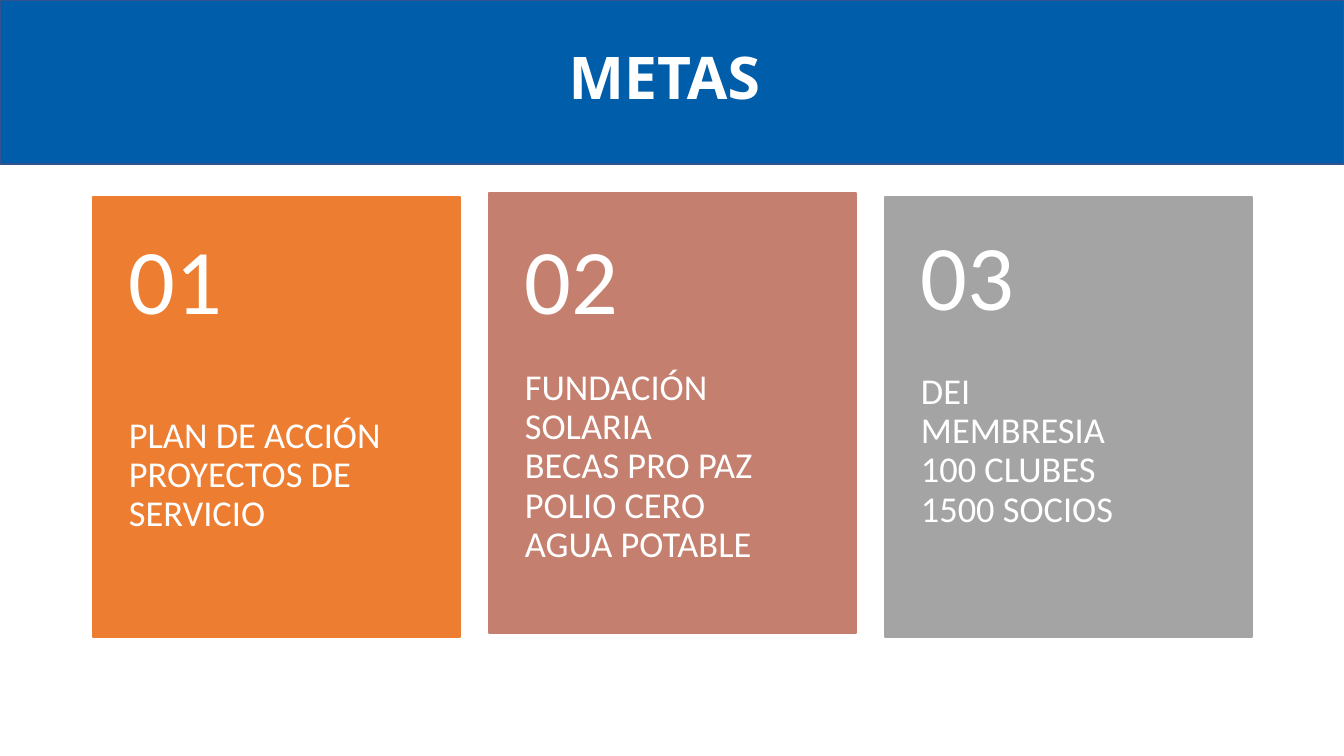
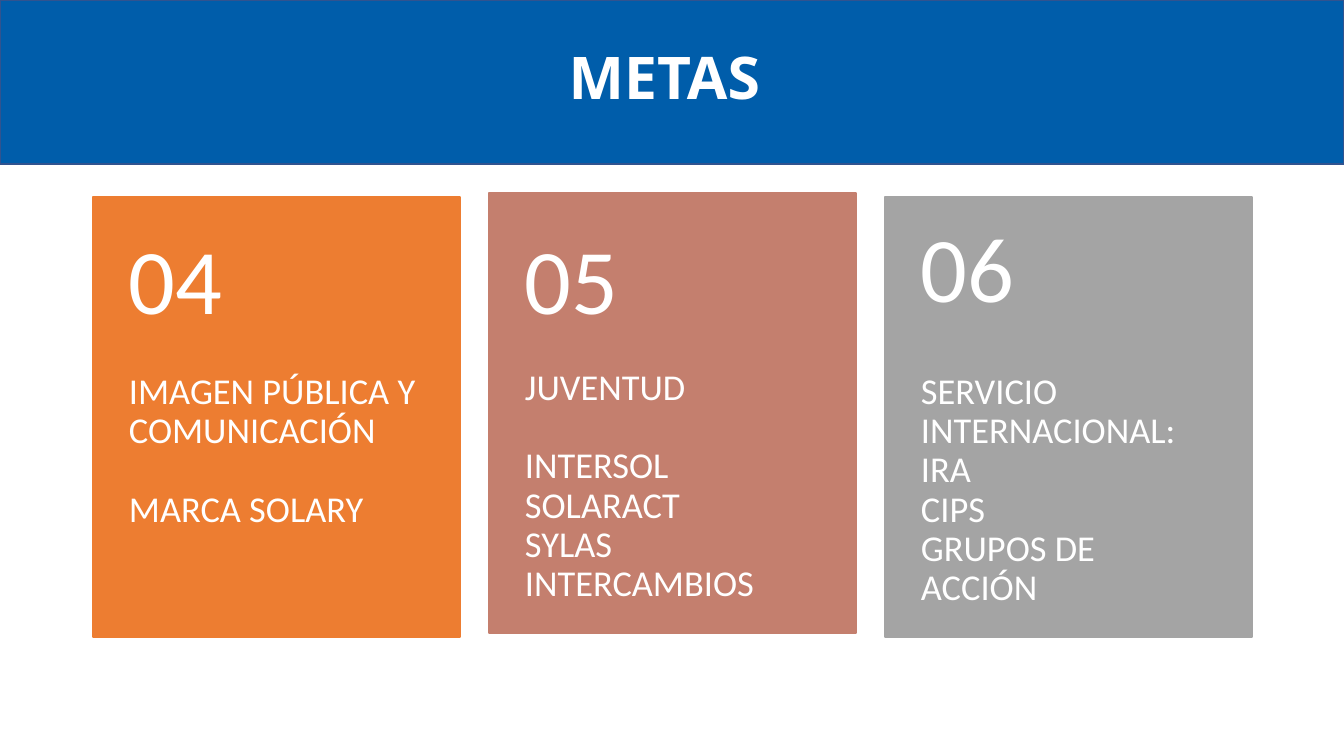
import pptx
import pptx.util
import pptx.dml.color
import pptx.enum.shapes
import pptx.enum.text

RGBColor = pptx.dml.color.RGBColor
Anchor = pptx.enum.text.MSO_ANCHOR
Align = pptx.enum.text.PP_ALIGN

# Content: per card its number, the number's top, the text's extra drop, and its lines.
# A line given as (text, GAP) stands one line lower.
GAP = 28
TITLE = "METAS "
SLIDES = [
    [
        ("01", 197, 44, ["PLAN DE ACCIÓN", "PROYECTOS DE", "SERVICIO"]),
        ("02", 197, 0, ["FUNDACIÓN SOLARIA", "BECAS PRO PAZ", "POLIO CERO", "AGUA POTABLE"]),
        ("03", 193, 0, ["DEI", "MEMBRESIA", "100 CLUBES", "1500 SOCIOS"]),
    ],
    [
        ("04", 197, 0, ["IMAGEN PÚBLICA Y", "COMUNICACIÓN", ("MARCA SOLARY", GAP)]),
        ("05", 197, 0, ["JUVENTUD", ("INTERSOL", GAP), "SOLARACT", "SYLAS", "INTERCAMBIOS"]),
        ("06", 185, 0, ["SERVICIO INTERNACIONAL:", "IRA", "CIPS", "GRUPOS DE ACCIÓN"]),
    ],
]

# Colours
WHITE = RGBColor(0xFF, 0xFF, 0xFF)
BLUE = RGBColor(0x00, 0x5D, 0xAA)
BLUE_EDGE = RGBColor(0x31, 0x53, 0x8F)
ORANGE = RGBColor(0xED, 0x7D, 0x31)
CLAY = RGBColor(0xC4, 0x7F, 0x6E)
GRAY = RGBColor(0xA4, 0xA4, 0xA4)

# Layout in px
EMU_PER_PX = 914400 / 100.8
SLIDE_W, SLIDE_H, BAND_H = 1344, 756, 164
CARD_LEFT, CARD_STEP, CARD_W, CARD_H = 93, 396, 367, 440
CARD_STYLES = [(197, ORANGE), (193, CLAY), (197, GRAY)]
NUMBER_H = 176

# Text styles: margins are left, top, right, bottom in px
TITLE_STYLE = {
    "font": {"name": "Open Sans", "size": pptx.util.Pt(42), "bold": True},
    "margins": (10, 5, 10, 5), "anchor": Anchor.BOTTOM, "align": Align.CENTER,
}
NUMBER_STYLE = {
    "font": {"name": "Calibri", "size": pptx.util.Pt(66)},
    "margins": (36, 18, 36, 18), "anchor": Anchor.MIDDLE, "align": Align.LEFT,
}
BODY_STYLE = {
    "font": {"name": "Calibri", "size": pptx.util.Pt(26)},
    "margins": (36, 0, 36, 36), "anchor": Anchor.TOP, "align": Align.LEFT,
}


def px(value):
    return pptx.util.Emu(round(value * EMU_PER_PX))


def add_block(page, area, fill, edge):
    block = page.shapes.add_shape(pptx.enum.shapes.MSO_SHAPE.RECTANGLE, *map(px, area))
    block.shadow.inherit = False
    block.fill.solid()
    block.fill.fore_color.rgb = fill
    block.line.color.rgb = edge
    block.line.width = pptx.util.Pt(1)


def add_text(page, area, lines, style):
    frame = page.shapes.add_textbox(*map(px, area)).text_frame
    frame.word_wrap = True
    frame.vertical_anchor = style["anchor"]
    for side, margin in zip(("left", "top", "right", "bottom"), style["margins"]):
        setattr(frame, "margin_" + side, px(margin))
    for index, line in enumerate(lines):
        text, gap = line if isinstance(line, tuple) else (line, 0)
        para = frame.add_paragraph() if index else frame.paragraphs[0]
        para.alignment = style["align"]
        para.line_spacing = 0.9
        para.space_before = pptx.util.Pt(gap)
        span = para.add_run()
        span.text = text
        for name, value in style["font"].items():
            setattr(span.font, name, value)
        span.font.color.rgb = WHITE


def build_page(deck, cards):
    page = deck.slides.add_slide(deck.slide_layouts[6])
    # Title band
    add_block(page, (0, 0, SLIDE_W, BAND_H), BLUE, BLUE_EDGE)
    add_text(page, (0, 47, SLIDE_W, 70), [TITLE], TITLE_STYLE)
    # Goal cards
    for column, (card, card_style) in enumerate(zip(cards, CARD_STYLES)):
        number, number_top, drop, lines = card
        top, color = card_style
        left = CARD_LEFT + column * CARD_STEP
        body_top = top + NUMBER_H + drop
        add_block(page, (left, top, CARD_W, CARD_H), color, color)
        add_text(page, (left, body_top, CARD_W, top + CARD_H - body_top), lines, BODY_STYLE)
        add_text(page, (left, number_top, CARD_W, NUMBER_H), [number], NUMBER_STYLE)


def main():
    deck = pptx.Presentation()
    deck.slide_width, deck.slide_height = px(SLIDE_W), px(SLIDE_H)
    for cards in SLIDES:
        build_page(deck, cards)
    deck.save("out.pptx")


if __name__ == "__main__":
    main()
